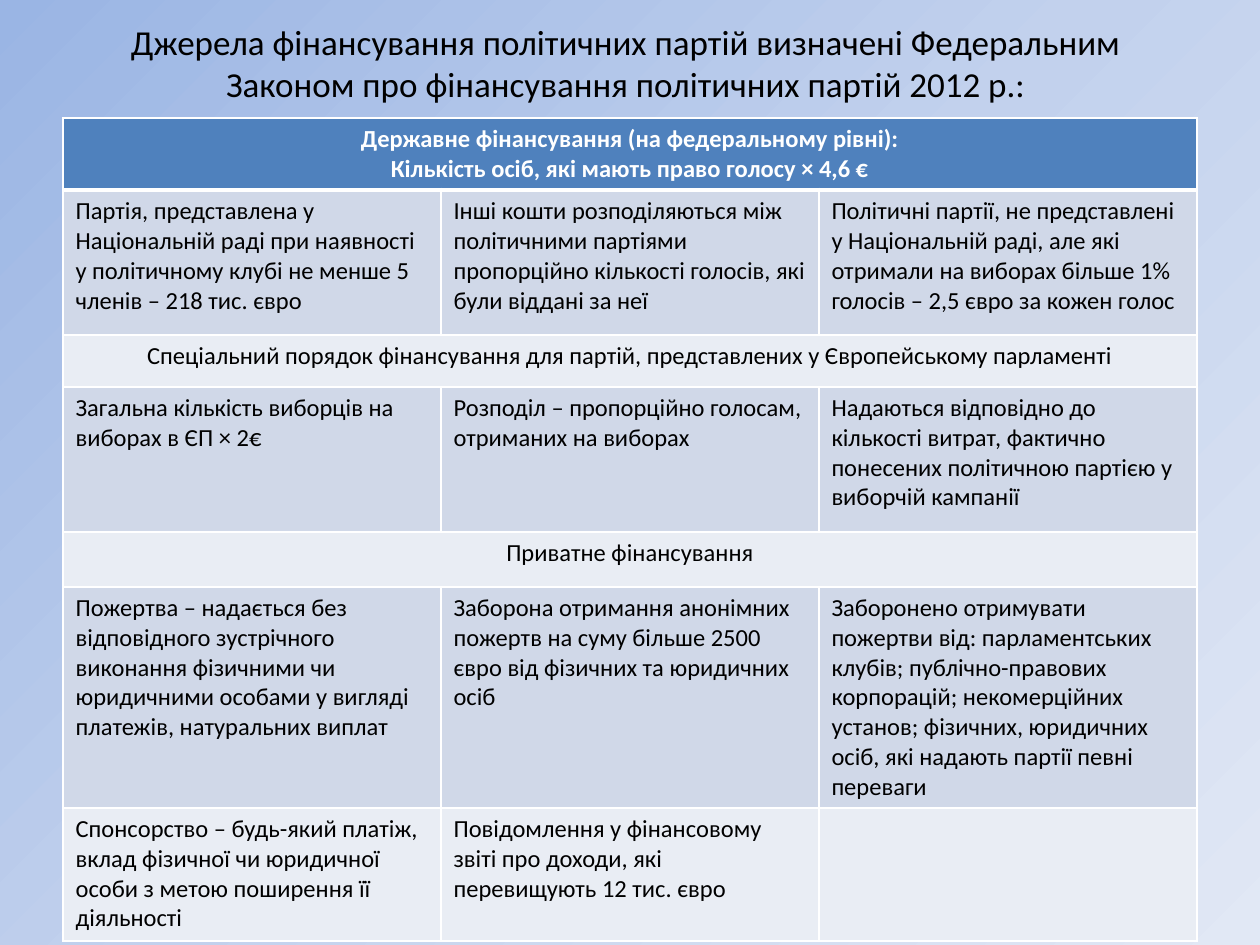
import copy
import pptx
import pptx.util
import pptx.dml.color
import pptx.enum.text
import pptx.oxml
import pptx.oxml.ns

EMU_PER_PX = 914400 // 126
FONT = "Calibri"
BLACK, WHITE = "000000", "FFFFFF"
HEADER, DARK_BAND, LIGHT_BAND = "4F81BD", "D0D8E8", "E9EDF4"
COLUMN_WIDTH = 378
TITLE = (
    "Джерела фінансування політичних партій визначені Федеральним "
    "Законом про фінансування політичних партій 2012 р.:"
)
ROWS = [
    (72, HEADER, [
        "Державне фінансування (на федеральному рівні):\n"
        "Кількість осіб, які мають право голосу × 4,6 €",
    ]),
    (145, DARK_BAND, [
        "Партія, представлена у Національній раді при наявності у політичному "
        "клубі не менше 5 членів – 218 тис. євро",
        "Інші кошти розподіляються між політичними партіями пропорційно "
        "кількості голосів, які були віддані за неї",
        "Політичні партії, не представлені у Національній раді, але які "
        "отримали на виборах більше 1% голосів – 2,5 євро за кожен голос",
    ]),
    (52, LIGHT_BAND, [
        "Спеціальний порядок фінансування для партій, представлених у "
        "Європейському парламенті",
    ]),
    (145, DARK_BAND, [
        "Загальна кількість виборців на виборах в ЄП × 2€",
        "Розподіл – пропорційно голосам, отриманих на виборах",
        "Надаються відповідно до кількості витрат, фактично понесених "
        "політичною партією у виборчій кампанії",
    ]),
    (55, LIGHT_BAND, ["Приватне фінансування"]),
    (221, DARK_BAND, [
        "Пожертва – надається без відповідного зустрічного виконання "
        "фізичними чи юридичними особами у вигляді платежів, натуральних виплат",
        "Заборона отримання анонімних пожертв на суму більше 2500 євро від "
        "фізичних та юридичних осіб",
        "Заборонено отримувати пожертви від: парламентських клубів; "
        "публічно-правових корпорацій; некомерційних установ; фізичних, "
        "юридичних осіб, які надають партії певні переваги",
    ]),
    (133, LIGHT_BAND, [
        "Спонсорство – будь-який платіж, вклад фізичної чи юридичної особи "
        "з метою поширення її діяльності",
        "Повідомлення у фінансовому звіті про доходи, які перевищують "
        "12 тис. євро",
        "",
    ]),
]


def px(length):
    return pptx.util.Emu(length * EMU_PER_PX)


def rgb(value):
    return pptx.dml.color.RGBColor.from_string(value)


def set_background(slide, colors):
    fill = slide.background.fill
    fill.gradient()
    fill.gradient_angle = 315
    stop_list = slide._element.find(".//" + pptx.oxml.ns.qn("a:gsLst"))
    stop_list.insert(1, copy.deepcopy(stop_list[0]))
    for stop, position, color in zip(fill.gradient_stops, (0, 0.5, 1), colors):
        stop.position = position
        stop.color.rgb = rgb(color)


def write_text(text_frame, text, size, color, centered, bold=False):
    text_frame.text = text
    for paragraph in text_frame.paragraphs:
        if centered:
            paragraph.alignment = pptx.enum.text.PP_ALIGN.CENTER
        font = paragraph.font
        font.size = pptx.util.Pt(size)
        for run in paragraph.runs:
            run.font.name = FONT
            run.font.size = pptx.util.Pt(size)
            run.font.bold = bold
            run.font.color.rgb = rgb(color)


def add_title(slide):
    box = slide.shapes.add_textbox(px(59), px(0), px(1134), px(126))
    text_frame = box.text_frame
    text_frame.word_wrap = True
    text_frame.vertical_anchor = pptx.enum.text.MSO_ANCHOR.MIDDLE
    write_text(text_frame, TITLE, 20, BLACK, True)


def set_borders(cell, top, bottom):
    properties = cell._tc.get_or_add_tcPr()
    for side, width in (("L", 1), ("R", 1), ("T", top), ("B", bottom)):
        properties.append(pptx.oxml.parse_xml(
            f'<a:ln{side} {pptx.oxml.ns.nsdecls("a")} w="{pptx.util.Pt(width)}">'
            f'<a:solidFill><a:srgbClr val="{WHITE}"/></a:solidFill></a:ln{side}>'
        ))


def add_funding_table(slide):
    total_height = sum(height for height, _, _ in ROWS)
    table = slide.shapes.add_table(
        len(ROWS), 3, px(63), px(118), px(3 * COLUMN_WIDTH), px(total_height)
    ).table
    for column in table.columns:
        column.width = px(COLUMN_WIDTH)
    for row_index, (height, fill, texts) in enumerate(ROWS):
        table.rows[row_index].height = px(height)
        is_header = row_index == 0
        is_merged = len(texts) == 1
        for column_index in range(3):
            cell = table.cell(row_index, column_index)
            set_borders(cell, 3 if row_index == 1 else 1, 3 if is_header else 1)
            cell.fill.solid()
            cell.fill.fore_color.rgb = rgb(fill)
        if is_merged:
            table.cell(row_index, 0).merge(table.cell(row_index, 2))
        for column_index, text in enumerate(texts):
            write_text(
                table.cell(row_index, column_index).text_frame, text, 14,
                WHITE if is_header else BLACK, is_merged, is_header,
            )


def main():
    presentation = pptx.Presentation()
    presentation.slide_width = px(1260)
    presentation.slide_height = px(945)
    slide = presentation.slides.add_slide(presentation.slide_layouts[6])
    set_background(slide, ("9AB5E4", "C2D1ED", "E1E8F5"))
    add_title(slide)
    add_funding_table(slide)
    presentation.save("out.pptx")


if __name__ == "__main__":
    main()
